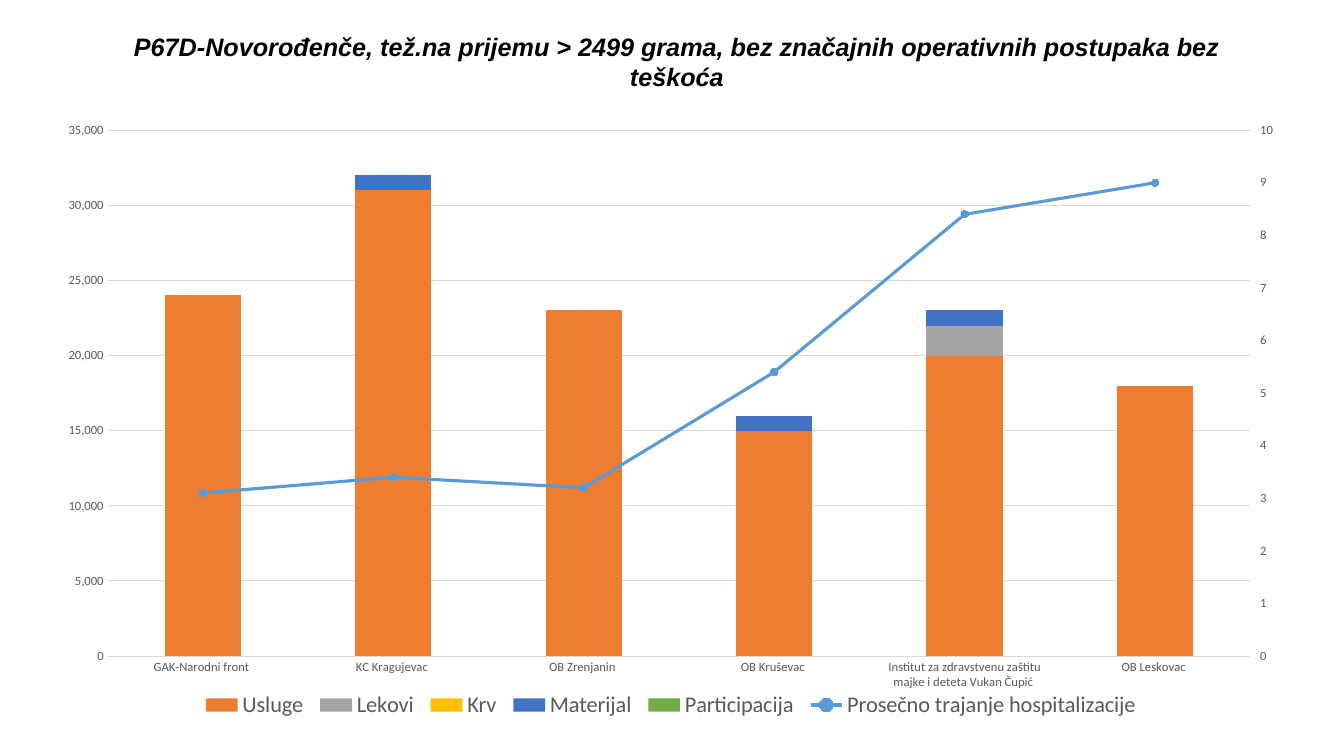
from copy import deepcopy

from lxml import etree
from pptx import Presentation
from pptx.chart.axis import ValueAxis
from pptx.chart.data import CategoryChartData
from pptx.dml.color import RGBColor
from pptx.enum.chart import XL_CHART_TYPE as ChartType
from pptx.enum.chart import XL_LEGEND_POSITION as LegendPosition
from pptx.enum.chart import XL_MARKER_STYLE as MarkerStyle
from pptx.enum.chart import XL_TICK_MARK as TickMark
from pptx.enum.text import PP_ALIGN as Align
from pptx.oxml.ns import qn
from pptx.util import Pt

COLORS = {
    "text": "000000",
    "label": "595959",
    "grid": "D9D9D9",
    "Usluge": "ED7D31",
    "Lekovi": "A5A5A5",
    "Krv": "FFC000",
    "Materijal": "4472C4",
    "Participacija": "70AD47",
    "stay": "5B9BD5",
}
HOSPITALS = [
    "GAK-Narodni front ",
    "KC Kragujevac ",
    "OB Zrenjanin ",
    "OB Kruševac ",
    "Institut za zdravstvenu zaštitu majke i deteta Vukan Čupić ",
    "OB Leskovac ",
]
COSTS = {
    "Usluge": [24000, 31000, 23000, 15000, 20000, 18000],
    "Lekovi": [0, 0, 0, 0, 2000, 0],
    "Krv": [0] * 6,
    "Materijal": [0, 1000, 0, 1000, 1000, 0],
    "Participacija": [0] * 6,
}
STAY_NAME = "Prosečno trajanje hospitalizacije"
STAY_DAYS = [3.1, 3.4, 3.2, 5.4, 8.4, 9]
PLOT_LAYOUT = {"x": 0.043, "y": 0.025, "w": 0.927, "h": 0.851}
LEGEND_LAYOUT = {"x": 0.115, "y": 0.925, "w": 0.77, "h": 0.06}


def color(name):
    return RGBColor.from_string(COLORS[name])


def add_node(parent, tag, value=None):
    node = etree.SubElement(parent, qn(f"c:{tag}"))
    if value is not None:
        node.set("val", str(value))
    return node


def make_layout(shares, target=None):
    layout = etree.Element(qn("c:layout"))
    manual = add_node(layout, "manualLayout")
    if target:
        add_node(manual, "layoutTarget", target)
    for side in "xy":
        add_node(manual, f"{side}Mode", "edge")
    for side, share in shares.items():
        add_node(manual, side, share)
    return layout


def set_font(font, size, name="label", face="Calibri", bold=False, italic=False):
    font.size, font.name = Pt(size), face
    font.bold, font.italic = bold, italic
    font.color.rgb = color(name)


def write_text(para, text, align=Align.LEFT, **font_format):
    para.alignment = align
    span = para.add_run()
    span.text = text
    set_font(span.font, **font_format)


class SlideBuilder:
    def __init__(self, page, face="Arial"):
        self.page = page
        self.face = face

    def title(self, text, left, top, width, height):
        box = self.page.shapes.add_textbox(Pt(left), Pt(top), Pt(width), Pt(height))
        box.text_frame.word_wrap = True
        write_text(box.text_frame.paragraphs[0], text, align=Align.CENTER,
                   size=18, name="text", face=self.face, bold=True, italic=True)

    def combined_chart(self, left, top, width, height):
        data = CategoryChartData(number_format="General")
        data.categories = HOSPITALS
        for name, values in {**COSTS, STAY_NAME: STAY_DAYS}.items():
            data.add_series(name, values)
        frame = self.page.shapes.add_chart(
            ChartType.COLUMN_STACKED, Pt(left), Pt(top), Pt(width), Pt(height), data)
        chart = frame.chart
        chart.has_title = False
        set_font(chart.font, 10, "text")
        self.style_axes(chart)
        self.move_stay_to_right_axis(chart)
        self.style_series(chart)
        self.add_legend(chart)

    def add_legend(self, chart):
        chart.has_legend = True
        chart.legend.position = LegendPosition.BOTTOM
        chart.legend.include_in_layout = False
        set_font(chart.legend.font, 16)
        legend = chart.element.find(".//" + qn("c:legend"))
        for layout in legend.findall(qn("c:layout")):
            legend.remove(layout)
        legend.find(qn("c:legendPos")).addnext(make_layout(LEGEND_LAYOUT))

    def style_axes(self, chart):
        for axis in (chart.category_axis, chart.value_axis):
            axis.major_tick_mark = axis.minor_tick_mark = TickMark.NONE
            set_font(axis.tick_labels.font, 9)
        base_line = chart.category_axis.format.line
        costs = chart.value_axis
        costs.has_major_gridlines = True
        for line in (base_line, costs.major_gridlines.format.line):
            line.color.rgb = color("grid")
            line.width = Pt(0.75)
        costs.format.line.fill.background()
        costs.minimum_scale, costs.maximum_scale, costs.major_unit = 0, 35000, 5000
        costs.tick_labels.number_format = "#,##0"
        costs.tick_labels.number_format_is_linked = False

    def move_stay_to_right_axis(self, chart):
        area = chart.element.find(".//" + qn("c:plotArea"))
        for layout in area.findall(qn("c:layout")):
            area.remove(layout)
        area.insert(0, make_layout(PLOT_LAYOUT, "inner"))

        bars = area.find(qn("c:barChart"))
        stay = bars.findall(qn("c:ser"))[-1]
        for node in stay.findall(qn("c:invertIfNegative")):
            stay.remove(node)
        lines = etree.Element(qn("c:lineChart"))
        add_node(lines, "grouping", "standard")
        add_node(lines, "varyColors", 0)
        lines.append(stay)
        add_node(lines, "marker", 1)
        bars.addnext(lines)

        old_category, old_value = area.find(qn("c:catAx")), area.find(qn("c:valAx"))
        category, value = deepcopy(old_category), deepcopy(old_value)
        for axis, own, other in ((category, 5001, 5002), (value, 5002, 5001)):
            axis.find(qn("c:axId")).set("val", str(own))
            axis.find(qn("c:crossAx")).set("val", str(other))
            add_node(lines, "axId", own)
        old_value.addnext(category)
        category.addnext(value)
        category.find(qn("c:delete")).set("val", "1")
        value.find(qn("c:axPos")).set("val", "r")
        value.find(qn("c:crosses")).set("val", "max")
        days = ValueAxis(value)
        days.has_major_gridlines = False
        days.major_tick_mark = TickMark.OUTSIDE
        days.maximum_scale, days.major_unit = 10, 1
        days.tick_labels.number_format = "General"

    def style_series(self, chart):
        bars, lines = chart.plots
        bars.gap_width, bars.overlap = 150, 100
        bars.vary_by_categories = False
        for series in bars.series:
            series.format.fill.solid()
            series.format.fill.fore_color.rgb = color(series.name)
        stay = lines.series[0]
        stay.smooth = False
        stay.format.line.color.rgb = color("stay")
        stay.format.line.width = Pt(2.25)
        stay.marker.style, stay.marker.size = MarkerStyle.CIRCLE, 5
        stay.marker.format.fill.solid()
        stay.marker.format.fill.fore_color.rgb = color("stay")
        stay.marker.format.line.color.rgb = color("stay")


def main():
    deck = Presentation()
    deck.slide_width, deck.slide_height = Pt(960), Pt(540)
    builder = SlideBuilder(deck.slides.add_slide(deck.slide_layouts[6]))
    builder.combined_chart(39, 82, 880.5, 441.5)
    builder.title("P67D-Novorođenče, tež.na prijemu > 2499 grama, "
                  "bez značajnih operativnih postupaka bez teškoća", 54, 19, 859, 51)
    deck.save("out.pptx")


if __name__ == "__main__":
    main()
